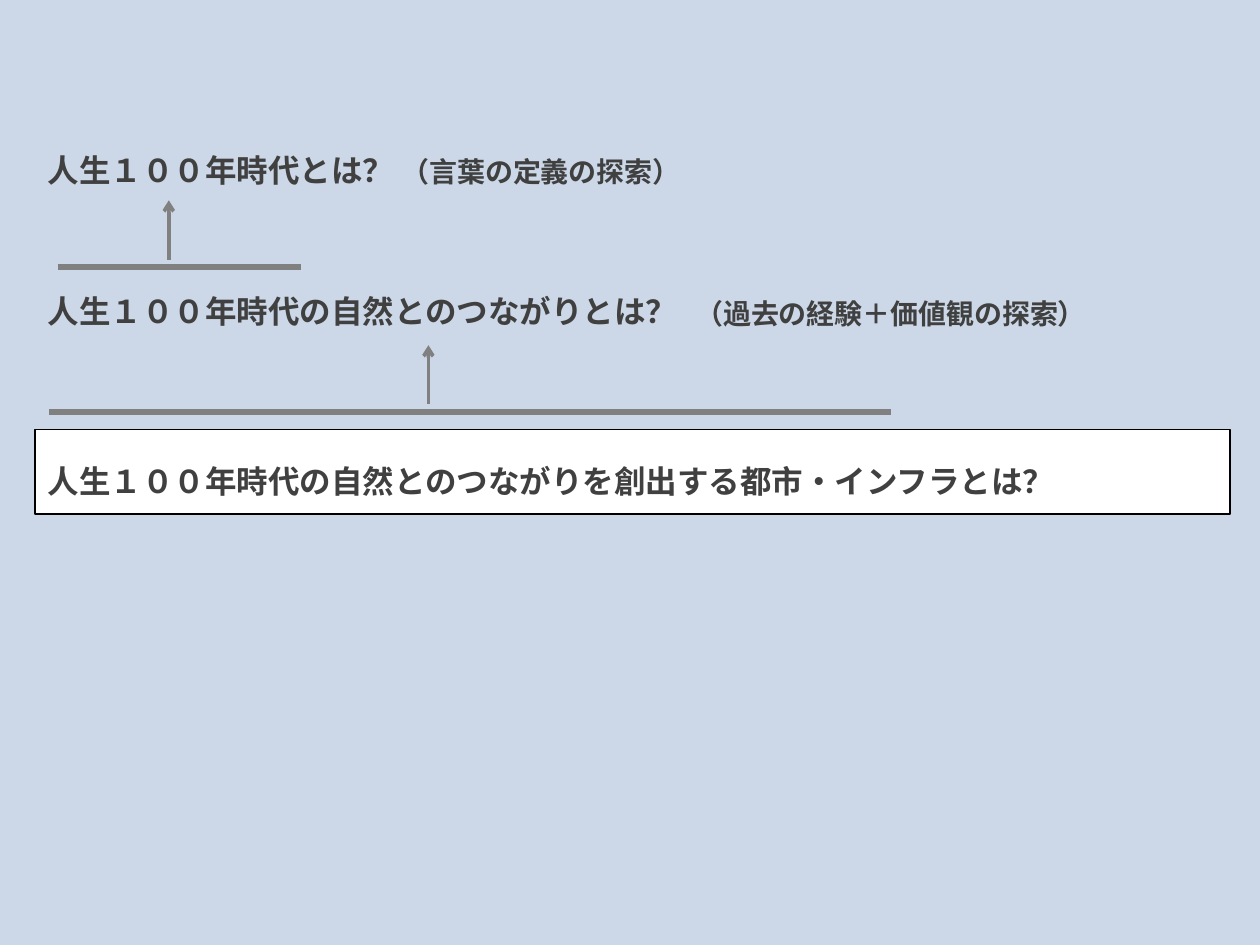
from lxml import etree
from pptx import Presentation
from pptx.dml.color import RGBColor
from pptx.enum.shapes import MSO_CONNECTOR, MSO_SHAPE
from pptx.enum.text import MSO_ANCHOR, PP_ALIGN
from pptx.oxml.ns import qn
from pptx.util import Pt

PX = 9144  # 100 px to the inch
FONT = "Noto Sans CJK JP"
BACKGROUND, WHITE, BLACK = "CCD8E7", "FFFFFF", "000000"
INK, GRAY = "404040", "808080"
LEFT, CENTER = PP_ALIGN.LEFT, PP_ALIGN.CENTER
MIDDLE = MSO_ANCHOR.MIDDLE
RECTANGLE = MSO_SHAPE.RECTANGLE
STRAIGHT = MSO_CONNECTOR.STRAIGHT


def px(*values):
    return [round(v * PX) for v in values]


def rgb(color):
    return RGBColor.from_string(color)


def write(sp, text, size, align):
    tf = sp.text_frame
    tf.word_wrap = True
    tf.vertical_anchor = MIDDLE
    p = tf.paragraphs[0]
    p.alignment = align
    p.line_spacing = Pt(32)
    r = p.add_run()
    r.text = text
    r.font.size = Pt(size)
    r.font.bold = True
    r.font.name = FONT
    r.font.color.rgb = rgb(INK)
    # East Asian typeface
    etree.SubElement(r.font._element, qn("a:ea"), typeface=FONT)


def add_line(slide, x1, y1, x2, y2, width, arrow=False):
    line = slide.shapes.add_connector(STRAIGHT, *px(x1, y1, x2, y2))
    line.line.color.rgb = rgb(GRAY)
    line.line.width = Pt(width)
    if arrow:
        etree.SubElement(line.line._get_or_add_ln(), qn("a:tailEnd"), type="arrow")
    etree.SubElement(line._element.spPr, qn("a:effectLst"))


def add_question(slide, box, text, note=None, framed=False):
    """A question line, with an optional note given as (dx, dy, width, text)."""
    x, y, w, h = box
    if framed:
        sp = slide.shapes.add_shape(RECTANGLE, *px(x, y, w, h))
        sp.shadow.inherit = False
        sp.fill.solid()
        sp.fill.fore_color.rgb = rgb(WHITE)
        sp.line.color.rgb = rgb(BLACK)
        sp.line.width = Pt(1)
    else:
        sp = slide.shapes.add_textbox(*px(x, y, w, h))
    write(sp, text, 18, LEFT)
    if note:
        dx, dy, note_w, note_text = note
        sp = slide.shapes.add_textbox(*px(x + dx, y + dy, note_w, 48))
        write(sp, note_text, 16, CENTER)


def add_marker(slide, x, y, w, dx):
    """A bar over the shared words, with an arrow up to the question above."""
    add_line(slide, x, y, x + w, y, 3.5)
    add_line(slide, x + dx, y - 6, x + dx, y - 53, 2, arrow=True)


def main():
    prs = Presentation()
    prs.slide_width, prs.slide_height = px(1000, 750)
    slide = prs.slides.add_slide(prs.slide_layouts[6])
    slide.background.fill.solid()
    slide.background.fill.fore_color.rgb = rgb(BACKGROUND)

    # Questions, from the definition to the framed main theme
    questions = [
        (94, "人生１００年時代とは？", (255, 9, 293, "（言葉の定義の探索）"), False),
        (206, "人生１００年時代の自然とのつながりとは？",
         (491, 10, 376, "（過去の経験＋価値観の探索）"), False),
        (341, "人生１００年時代の自然とのつながりを創出する都市・インフラとは？", None, True),
    ]
    for y, text, note, framed in questions:
        add_question(slide, (28, y, 948, 67), text, note, framed)

    # Links between the questions
    add_marker(slide, 46, 212, 193, 88)
    add_marker(slide, 39, 327, 668, 301)

    prs.save("out.pptx")


if __name__ == "__main__":
    main()
